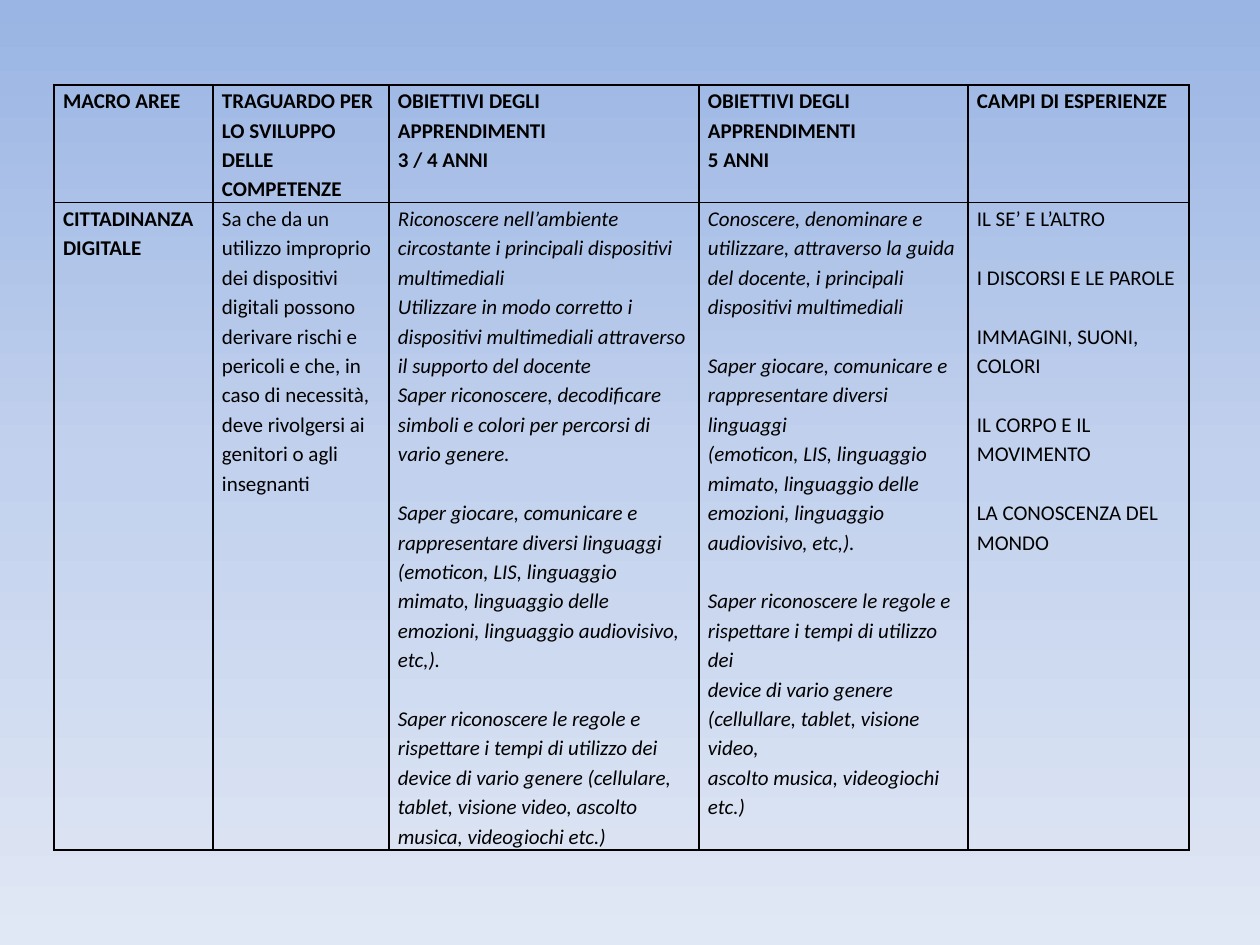
from lxml import etree
from pptx import Presentation
from pptx.dml.color import RGBColor
from pptx.enum.text import MSO_ANCHOR
from pptx.oxml.ns import qn
from pptx.util import Emu, Pt

TOP = MSO_ANCHOR.TOP
BLANK_LAYOUT = 6
PX_PER_INCH = 126
INK = "000000"
BLOCK_GAP = Pt(16.8)  # one line of text
GRADIENT = [(0, "9AB5E4"), (50, "C2D1ED"), (100, "E1E8F5")]

COLUMNS = [159, 176, 310, 269, 221]
ROWS = [117, 647]
BASE = {"name": "Calibri", "size": Pt(12), "bold": False, "italic": False}
BOLD = {**BASE, "bold": True}
ITALIC = {**BASE, "italic": True}

# Each cell is a list of blocks; each line of a block is a paragraph
HEADERS = [
    ["MACRO AREE"],
    ["TRAGUARDO PER LO SVILUPPO\nDELLE COMPETENZE"],
    ["OBIETTIVI DEGLI\nAPPRENDIMENTI\n3 / 4 ANNI"],
    ["OBIETTIVI DEGLI\nAPPRENDIMENTI\n5 ANNI"],
    ["CAMPI DI ESPERIENZE"],
]
AREA = ["CITTADINANZA\nDIGITALE"]
GOAL = [
    "Sa che da un utilizzo improprio dei dispositivi digitali possono derivare "
    "rischi e pericoli e che, in caso di necessità, deve rivolgersi ai genitori "
    "o agli insegnanti"
]
AGES_3_4 = [
    """Riconoscere nell’ambiente circostante i principali dispositivi multimediali
Utilizzare in modo corretto i dispositivi multimediali attraverso il supporto del docente
Saper riconoscere, decodificare
simboli e colori per percorsi di
vario genere.""",
    """Saper giocare, comunicare e
rappresentare diversi linguaggi
(emoticon, LIS, linguaggio
mimato, linguaggio delle
emozioni, linguaggio audiovisivo,
etc,).""",
    """Saper riconoscere le regole e
rispettare i tempi di utilizzo dei
device di vario genere (cellulare,
tablet, visione video, ascolto
musica, videogiochi etc.)""",
]
AGE_5 = [
    "Conoscere, denominare e utilizzare, attraverso la guida del docente, "
    "i principali dispositivi multimediali",
    """Saper giocare, comunicare e
rappresentare diversi linguaggi
(emoticon, LIS, linguaggio
mimato, linguaggio delle
emozioni, linguaggio
audiovisivo, etc,).""",
    """Saper riconoscere le regole e
rispettare i tempi di utilizzo dei
device di vario genere
(cellullare, tablet, visione video,
ascolto musica, videogiochi etc.)""",
]
FIELDS = [
    "IL SE’ E L’ALTRO",
    "I DISCORSI E LE PAROLE",
    "IMMAGINI, SUONI, COLORI",
    "IL CORPO E IL MOVIMENTO",
    "LA CONOSCENZA DEL\nMONDO",
]
CONTENT = [
    [(blocks, BOLD) for blocks in HEADERS],
    [(AREA, BOLD), (GOAL, BASE), (AGES_3_4, ITALIC), (AGE_5, ITALIC), (FIELDS, BASE)],
]


def px(n):
    return Emu(round(n * 914400 / PX_PER_INCH))


def rgb(value):
    return RGBColor.from_string(value)


def add_color(parent, value):
    etree.SubElement(parent, qn("a:srgbClr"), val=value)


def set_background(slide):
    fill = slide.background.fill
    fill.gradient()
    fill.gradient_angle = 270
    stops = next(slide.element.iter(qn("a:gsLst")))
    for stop in list(stops):
        stops.remove(stop)
    for percent, value in GRADIENT:
        add_color(etree.SubElement(stops, qn("a:gs"), pos=str(percent * 1000)), value)


def set_borders(cell):
    props = cell._tc.get_or_add_tcPr()
    for index, side in enumerate(("lnL", "lnR", "lnT", "lnB")):
        line = etree.Element(qn(f"a:{side}"), w=str(Pt(1)))
        add_color(etree.SubElement(line, qn("a:solidFill")), INK)
        props.insert(index, line)


def write_blocks(tf, blocks, font):
    paragraphs = [
        (text, block > 0 and line == 0)
        for block, lines in enumerate(blocks)
        for line, text in enumerate(lines.split("\n"))
    ]
    for index, (text, starts_block) in enumerate(paragraphs):
        p = tf.add_paragraph() if index else tf.paragraphs[0]
        p.line_spacing = 1.15
        p.space_before = BLOCK_GAP if starts_block else Pt(0)
        r = p.add_run()
        r.text = text
        r.font.color.rgb = rgb(INK)
        for name, value in font.items():
            setattr(r.font, name, value)


def format_cell(cell, blocks, font):
    layout = {"margin_left": px(9), "margin_right": px(9), "margin_top": 0,
              "margin_bottom": 0, "vertical_anchor": TOP}
    for name, value in layout.items():
        setattr(cell, name, value)
    cell.fill.background()
    set_borders(cell)
    write_blocks(cell.text_frame, blocks, font)


def add_curriculum_table(slide):
    frame = slide.shapes.add_table(len(ROWS), len(COLUMNS), px(54), px(85),
                                   px(sum(COLUMNS)), px(sum(ROWS)))
    table = frame.table
    table.first_row = table.horz_banding = False
    for column, width in zip(table.columns, COLUMNS):
        column.width = px(width)
    for row, height, contents in zip(table.rows, ROWS, CONTENT):
        row.height = px(height)
        for cell, (blocks, font) in zip(row.cells, contents):
            format_cell(cell, blocks, font)


def main():
    prs = Presentation()
    prs.slide_width, prs.slide_height = px(1260), px(945)
    slide = prs.slides.add_slide(prs.slide_layouts[BLANK_LAYOUT])
    set_background(slide)
    add_curriculum_table(slide)
    prs.save("out.pptx")


if __name__ == "__main__":
    main()
